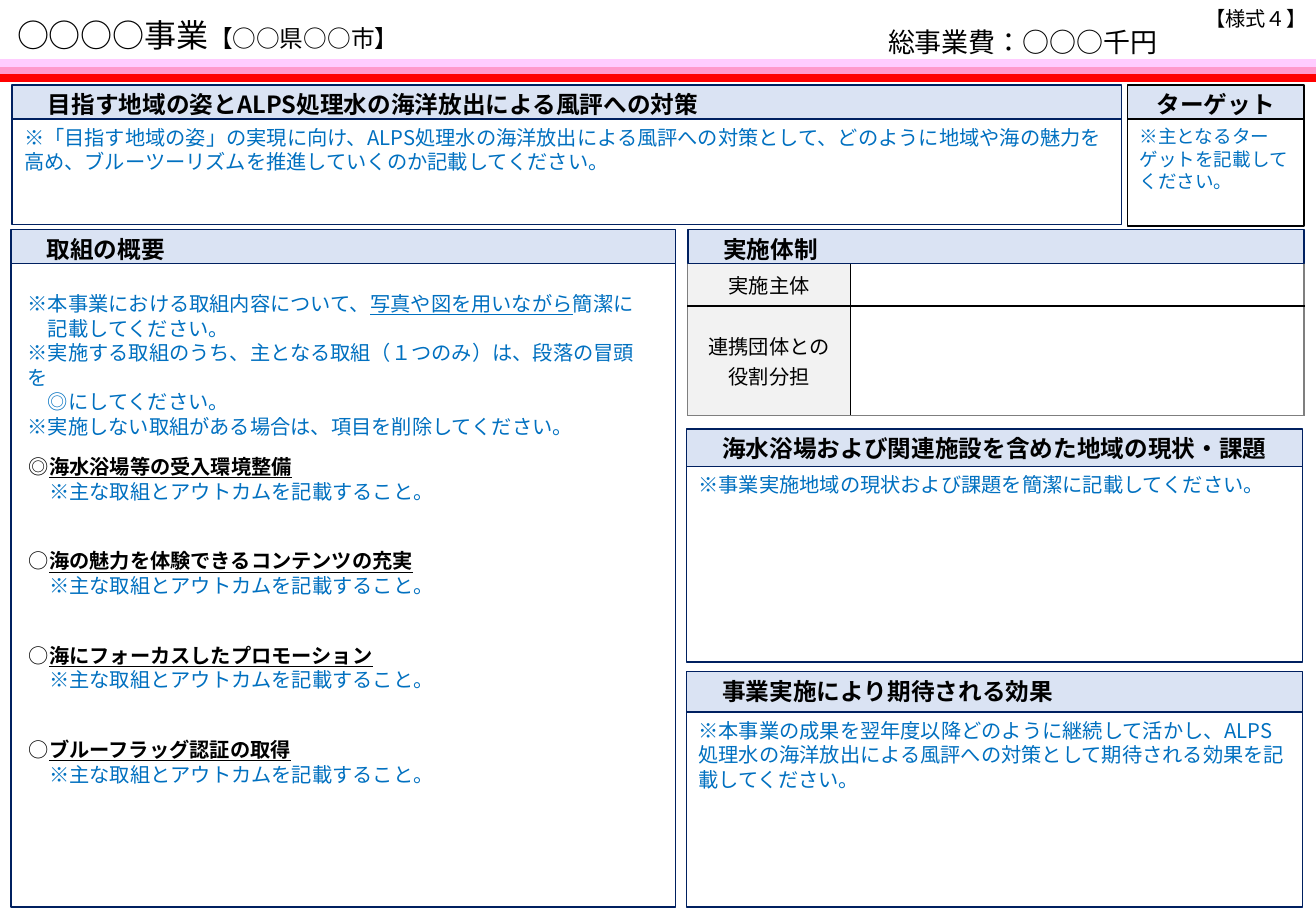
from lxml import etree
from pptx import Presentation
from pptx.dml.color import RGBColor
from pptx.enum.lang import MSO_LANGUAGE_ID
from pptx.enum.shapes import MSO_CONNECTOR, MSO_SHAPE
from pptx.enum.text import MSO_ANCHOR, PP_ALIGN
from pptx.oxml.ns import qn
from pptx.util import Inches, Pt

RECT = MSO_SHAPE.RECTANGLE
STRAIGHT = MSO_CONNECTOR.STRAIGHT
JAPANESE = MSO_LANGUAGE_ID.JAPANESE
TOP, MIDDLE = MSO_ANCHOR.TOP, MSO_ANCHOR.MIDDLE
LEFT, CENTER, RIGHT = PP_ALIGN.LEFT, PP_ALIGN.CENTER, PP_ALIGN.RIGHT
FONT = "Noto Sans CJK JP"
BLACK, WHITE, NAVY, BLUE = "000000", "FFFFFF", "002060", "0070C0"
PALE, LIGHT_GRAY, GRAY = "DAE3F3", "F2F2F2", "7F7F7F"
SECTIONS = [
    ("◎", "海水浴場等の受入環境整備"),
    ("○", "海の魅力を体験できるコンテンツの充実"),
    ("○", "海にフォーカスしたプロモーション"),
    ("○", "ブルーフラッグ認証の取得"),
]
INTRO = [
    "　記載してください。",
    "※実施する取組のうち、主となる取組（１つのみ）は、段落の冒頭を　",
    "　◎にしてください。",
    "※実施しない取組がある場合は、項目を削除してください。",
]


def rgb(value):
    return RGBColor.from_string(value)


def add_text(p, text, size=12, color=BLACK, bold=False, underline=False):
    r = p.add_run()
    r.text = text
    r.font.size = Pt(size)
    r.font.name = FONT
    r.font.bold = bold
    r.font.underline = underline
    r.font.language_id = JAPANESE
    r.font.color.rgb = rgb(color)
    etree.SubElement(r.font._element, qn("a:ea"), typeface=FONT)


def set_frame(tf, anchor=TOP, top=0.05):
    tf.word_wrap = True
    tf.vertical_anchor = anchor
    tf.margin_left = tf.margin_right = Inches(0.1)
    tf.margin_top, tf.margin_bottom = Inches(top), Inches(0.05)


def set_paragraph(p, align=LEFT, spacing=Pt(14.5)):
    p.alignment = align
    p.line_spacing = spacing
    return p


def add_textbox(s, x, y, w, h, **frame):
    tf = s.shapes.add_textbox(Inches(x), Inches(y), Inches(w), Inches(h)).text_frame
    set_frame(tf, **frame)
    return tf


def add_box(s, x, y, w, h, text="", fill=WHITE, line=NAVY, align=LEFT, size=12, top=0.05, **font):
    sp = s.shapes.add_shape(RECT, Inches(x), Inches(y), Inches(w), Inches(h))
    sp.shadow.inherit = False
    sp.fill.solid()
    sp.fill.fore_color.rgb = rgb(fill)
    sp.line.color.rgb = rgb(line)
    sp.line.width = Pt(1)
    if text:
        set_frame(sp.text_frame, top=top)
        p = set_paragraph(sp.text_frame.paragraphs[0], align, Pt(round(size * 1.21, 1)))
        add_text(p, text, size=size, **font)


def add_header(s, x, y, w, h, text, line=NAVY, align=LEFT):
    add_box(s, x, y, w, h, text, PALE, line, align, size=14, top=0.04, bold=True)


def add_panel(s, x, y, w, header_h, body_h, title, note="", line=NAVY, align=LEFT, size=12):
    add_box(s, x, y + header_h, w, body_h, note, line=line, size=size, color=BLUE)
    add_header(s, x, y, w, header_h, title, line, align)


def add_band(s, y, color, width):
    c = s.shapes.add_connector(STRAIGHT, 0, Inches(y), Inches(10.83), Inches(y))
    c.line.color.rgb = rgb(color)
    c.line.width = Pt(width)
    etree.SubElement(c._element.spPr, qn("a:effectLst"))


def set_borders(cell, **colors):
    tcPr = cell._tc.get_or_add_tcPr()
    for side, color in colors.items():
        ln = etree.SubElement(tcPr, qn(f"a:ln{side}"), w=str(Pt(1)))
        fill = etree.SubElement(ln, qn("a:solidFill"))
        etree.SubElement(fill, qn("a:srgbClr"), val=color)


def add_organization_table(s):
    labels = ["実施主体", "連携団体との役割分担"]
    frame = s.shapes.add_table(2, 2, Inches(5.66), Inches(2.17), Inches(5.07), Inches(1.25))
    table = frame.table
    table.first_row = table.horz_banding = False
    for column, w in zip(table.columns, (1.34, 3.73)):
        column.width = Inches(w)
    for row, h in zip(table.rows, (0.35, 0.9)):
        row.height = Inches(h)
    for i, label in enumerate(labels):
        for j, fill in enumerate((LIGHT_GRAY, WHITE)):
            cell = table.cell(i, j)
            set_borders(cell, L=BLACK if j else GRAY, R=GRAY if j else BLACK,
                        T=BLACK if i else GRAY, B=GRAY if i else BLACK)
            cell.fill.solid()
            cell.fill.fore_color.rgb = rgb(fill)
            cell.vertical_anchor = MIDDLE
        p = table.cell(i, 0).text_frame.paragraphs[0]
        p.alignment = CENTER
        add_text(p, label)
        blank = table.cell(i, 1).text_frame.paragraphs[0]
        etree.SubElement(blank._p, qn("a:endParaRPr"), sz="1200")


def add_heading(s):
    for y, color, width in [(0.52, "FFCCFF", 4.5), (0.59, "FF99CC", 5), (0.64, "FF0000", 4.75)]:
        add_band(s, y, color, width)
    title = s.shapes.title
    title.left, title.top = Inches(0.04), Inches(0.01)
    title.width, title.height = Inches(5.86), Inches(0.59)
    set_frame(title.text_frame, anchor=MIDDLE)
    p = set_paragraph(title.text_frame.paragraphs[0], spacing=0.9)
    add_text(p, "○○○○事業", size=19)
    add_text(p, "【○○県○○市】", size=14)
    tf = add_textbox(s, 9.17, 0, 1.68, 0.3, anchor=MIDDLE)
    add_text(set_paragraph(tf.paragraphs[0], RIGHT, 1.0), "【様式４】")
    tf = add_textbox(s, 7.21, 0.16, 3.62, 0.4, anchor=MIDDLE)
    add_text(set_paragraph(tf.paragraphs[0], spacing=0.9), "総事業費：○○○千円", size=16)


def add_overview(s):
    add_panel(s, 0.09, 1.89, 5.47, 0.28, 5.3, "　取組の概要")
    tf = add_textbox(s, 0.13, 2.16, 5.47, 1.26, top=0.24)
    p = set_paragraph(tf.paragraphs[0])
    add_text(p, "※本事業における取組内容について、", color=BLUE)
    add_text(p, "写真や図を用いながら", color=BLUE, underline=True)
    add_text(p, "簡潔に", color=BLUE)
    for line in INTRO:
        add_text(set_paragraph(tf.add_paragraph()), line, color=BLUE)
    for i, (mark, name) in enumerate(SECTIONS):
        tf = add_textbox(s, 0.14, 3.69 + i * 0.777, 5.47, 0.71)
        p = set_paragraph(tf.paragraphs[0])
        add_text(p, mark)
        add_text(p, name, bold=True, underline=True)
        add_text(set_paragraph(tf.add_paragraph()),
                 "　※主な取組とアウトカムを記載すること。", color=BLUE)


def main():
    prs = Presentation()
    prs.slide_width, prs.slide_height = Inches(10.83), Inches(7.5)
    s = prs.slides.add_slide(prs.slide_layouts[5])
    add_heading(s)
    add_panel(s, 0.1, 0.7, 9.13, 0.28, 0.87,
              "　目指す地域の姿とALPS処理水の海洋放出による風評への対策",
              "※「目指す地域の姿」の実現に向け、ALPS処理水の海洋放出による風評への対策として、"
              "どのように地域や海の魅力を高め、ブルーツーリズムを推進していくのか記載してください。")
    add_panel(s, 9.28, 0.7, 1.45, 0.28, 0.88, "ターゲット",
              "※主となるターゲットを記載してください。", line=BLACK, align=CENTER, size=11)
    add_overview(s)
    add_organization_table(s)
    add_header(s, 5.66, 1.89, 5.07, 0.28, "　実施体制")
    add_panel(s, 5.65, 3.53, 5.07, 0.31, 1.61,
              "　海水浴場および関連施設を含めた地域の現状・課題",
              "※事業実施地域の現状および課題を簡潔に記載してください。")
    add_panel(s, 5.65, 5.53, 5.07, 0.33, 1.61, "　事業実施により期待される効果",
              "※本事業の成果を翌年度以降どのように継続して活かし、ALPS処理水の海洋放出による"
              "風評への対策として期待される効果を記載してください。")
    prs.save("out.pptx")


if __name__ == "__main__":
    main()
